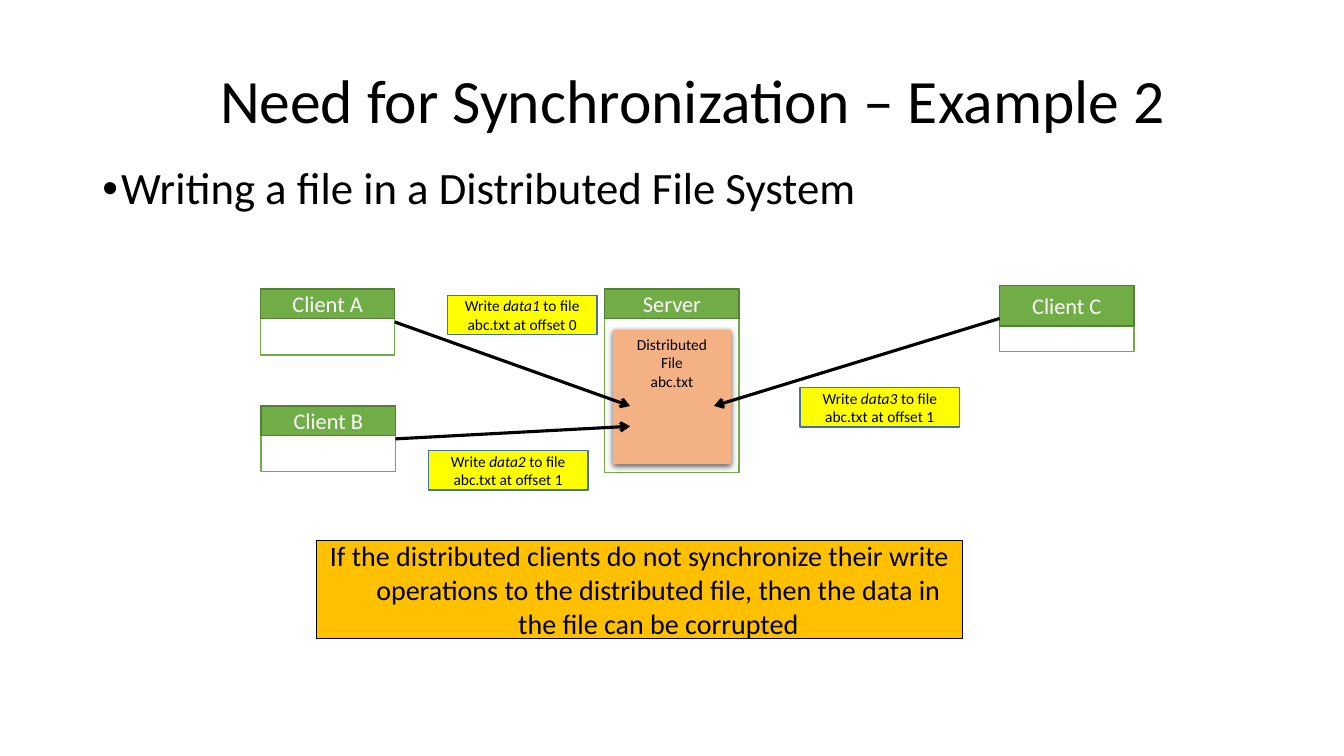
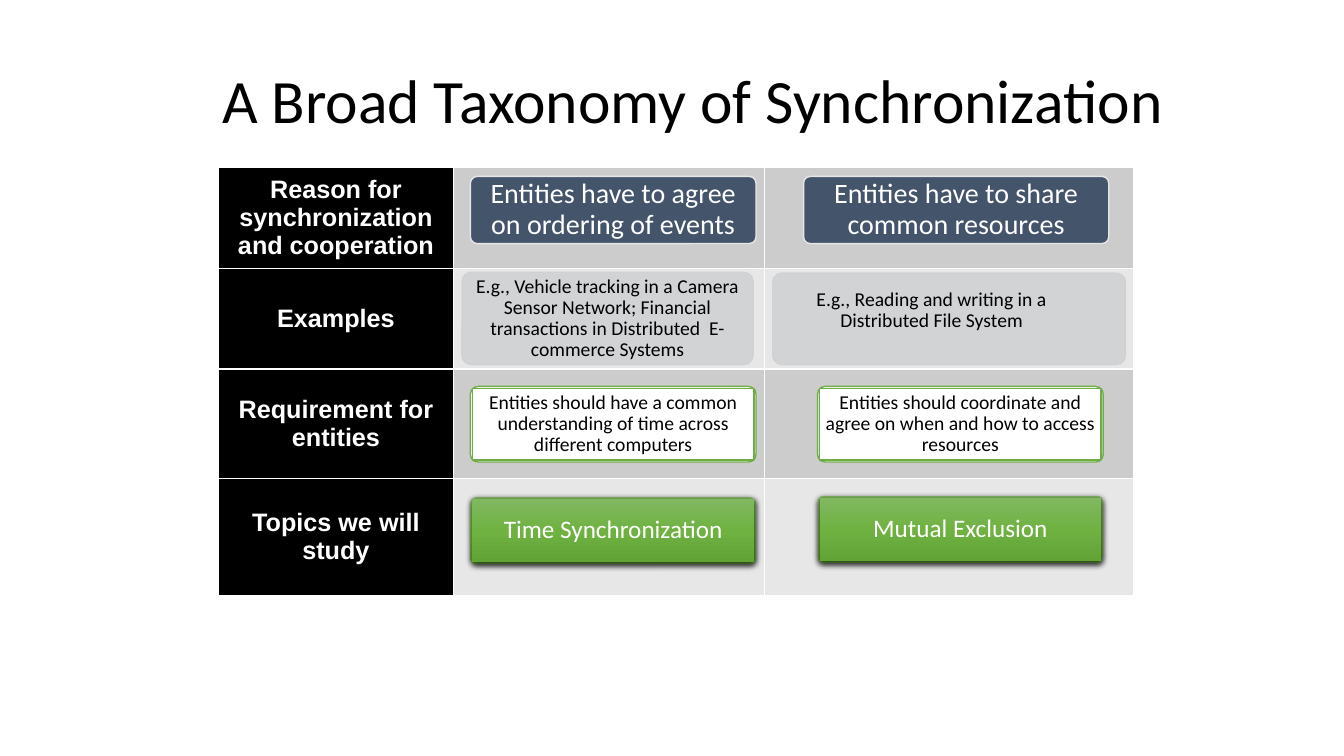
from copy import deepcopy
from dataclasses import dataclass

from pptx import Presentation
from pptx.dml.color import RGBColor
from pptx.enum.shapes import MSO_CONNECTOR, MSO_SHAPE
from pptx.enum.text import MSO_ANCHOR, PP_ALIGN
from pptx.oxml import parse_xml
from pptx.oxml.ns import nsdecls, qn
from pptx.oxml.xmlchemy import OxmlElement
from pptx.util import Pt


@dataclass(frozen=True)
class Theme:
    font: str = "Calibri"
    table_font: str = "Arial"
    # Colours
    black: str = "000000"
    white: str = "FFFFFF"
    green: str = "70AD47"
    dark_green: str = "538035"
    peach: str = "F4B183"
    yellow: str = "FFFF00"
    blue: str = "43739E"
    amber: str = "FFC000"
    navy: str = "44546A"
    pale: str = "E7E6E6"
    mist: str = "CFD1D4"
    bands: tuple = ("CCCCCC", "E7E7E7")
    gradient: tuple = ("81B861", "6FB242", "62A336")
    # Type sizes
    title: int = 44
    body: int = 32
    message: int = 20
    topic: int = 18
    node: int = 16
    detail: int = 14
    note: int = 11


THEME = Theme()
TITLE_AREA = (108, 21.5, 774, 104.5)
MARGINS = (7.2, 3.6, 7.2, 3.6)
TIGHT = (1.5, 1.5, 1.5, 1.5)


def rgb(colour):
    return RGBColor.from_string(colour)


def points(lengths):
    return [Pt(length) for length in lengths]


def write(frame, paragraphs, size, colour=THEME.black, align=PP_ALIGN.CENTER,
          anchor=MSO_ANCHOR.MIDDLE, margins=MARGINS, spacing=1.0):
    """Each paragraph is a list of runs; a run is (text, italic)."""
    frame.word_wrap = True
    frame.vertical_anchor = anchor
    (frame.margin_left, frame.margin_top,
     frame.margin_right, frame.margin_bottom) = points(margins)
    for index, runs in enumerate(paragraphs):
        paragraph = frame.add_paragraph() if index else frame.paragraphs[0]
        paragraph.alignment = align
        paragraph.line_spacing = spacing
        for text, italic in runs:
            run = paragraph.add_run()
            run.text = text
            style(run.font, size, colour, THEME.font)
            run.font.italic = italic


def style(font, size, colour, name):
    font.name = name
    font.size = Pt(size)
    font.color.rgb = rgb(colour)


def plain(*lines):
    return [[(line, False)] for line in lines]


def indent(paragraph, hang, bullet=None):
    properties = paragraph._p.get_or_add_pPr()
    properties.set("marL", str(Pt(hang)))
    properties.set("indent", str(-Pt(hang)))
    if bullet:
        properties.append(parse_xml(
            f'<a:buFont {nsdecls("a")} typeface="Arial"/>'))
        properties.append(parse_xml(
            f'<a:buChar {nsdecls("a")} char="{bullet}"/>'))


def box(slide, area, fill=None, line=None, rounded=False):
    kind = MSO_SHAPE.ROUNDED_RECTANGLE if rounded else MSO_SHAPE.RECTANGLE
    shape = slide.shapes.add_shape(kind, *points(area))
    shape.shadow.inherit = False
    if rounded:
        shape.adjustments[0] = 0.1
    if fill:
        shape.fill.solid()
        shape.fill.fore_color.rgb = rgb(fill)
    if line:
        shape.line.color.rgb = rgb(line)
        shape.line.width = Pt(1)
    else:
        shape.line.fill.background()
    return shape


def cast_shadow(shape):
    effects = shape._element.spPr.find(qn("a:effectLst"))
    effects.append(parse_xml(
        f'<a:outerShdw {nsdecls("a")} blurRad="{Pt(4.5)}" dist="{Pt(1.5)}" '
        f'dir="5400000" rotWithShape="0"><a:srgbClr val="{THEME.black}">'
        '<a:alpha val="63000"/></a:srgbClr></a:outerShdw>'))


def shade(shape):
    shape.fill.gradient()
    shape.fill.gradient_angle = 270
    stop_list = next(shape._element.spPr.iter(qn("a:gsLst")))
    stop_list.insert(1, deepcopy(stop_list[0]))
    for index, stop in enumerate(shape.fill.gradient_stops):
        stop.position = index / 2
        stop.color.rgb = rgb(THEME.gradient[index])


def make_translucent(shape, percent):
    for colour in shape._element.spPr.iter(qn("a:srgbClr")):
        alpha = OxmlElement("a:alpha")
        alpha.set("val", str(percent * 1000))
        colour.append(alpha)


def add_slide(deck, title):
    slide = deck.slides.add_slide(deck.slide_layouts[6])
    heading = slide.shapes.add_textbox(*points(TITLE_AREA))
    write(heading.text_frame, plain(title), THEME.title, spacing=0.9)
    return slide


# Parts of the file system diagram

def add_node(slide, name, left, top, height, header_height=21):
    frame = box(slide, (left, top, 96, height), THEME.white, THEME.green)
    header = box(slide, (left, top, 96, header_height),
                 THEME.green, THEME.dark_green)
    write(header.text_frame, plain(name), THEME.node, THEME.white)
    return frame


def add_arrow(slide, client, side, target):
    arrow = slide.shapes.add_connector(
        MSO_CONNECTOR.STRAIGHT, 0, 0, *points(target))
    arrow.begin_connect(client, side)
    arrow.line.color.rgb = rgb(THEME.black)
    arrow.line.width = Pt(2.25)
    head = OxmlElement("a:tailEnd")
    head.set("type", "arrow")
    arrow.line._get_or_add_ln().append(head)
    arrow._element.spPr.append(OxmlElement("a:effectLst"))


def add_note(slide, area, data, offset):
    note = box(slide, area, THEME.yellow, THEME.blue)
    runs = [("Write ", False), (data, True),
            (f" to file abc.txt at offset {offset}", False)]
    write(note.text_frame, [runs], THEME.note)


# Parts of the taxonomy

def add_table(slide, area, widths, heights, labels):
    table = slide.shapes.add_table(
        len(heights), len(widths), *points(area)).table
    table.first_row = table.horz_banding = False
    for column, width in zip(table.columns, widths):
        column.width = Pt(width)
    for index, (row, height) in enumerate(zip(table.rows, heights)):
        row.height = Pt(height)
        for cell in row.cells:
            add_borders(cell)
            cell.fill.solid()
            cell.fill.fore_color.rgb = rgb(THEME.bands[index % 2])
        label = row.cells[0]
        label.fill.fore_color.rgb = rgb(THEME.black)
        label.vertical_anchor = MSO_ANCHOR.MIDDLE
        paragraph = label.text_frame.paragraphs[0]
        paragraph.alignment = PP_ALIGN.CENTER
        run = paragraph.add_run()
        run.text = labels[index]
        style(run.font, THEME.topic, THEME.white, THEME.table_font)
        run.font.bold = True


def add_borders(cell):
    properties = cell._tc.get_or_add_tcPr()
    for side in ("lnL", "lnR", "lnT", "lnB"):
        properties.append(parse_xml(
            f'<a:{side} {nsdecls("a")} w="{Pt(1)}"><a:solidFill>'
            f'<a:srgbClr val="{THEME.white}"/></a:solidFill></a:{side}>'))


def add_reason(slide, area, text):
    card = box(slide, area, THEME.navy, THEME.pale, rounded=True)
    write(card.text_frame, plain(text), THEME.message, THEME.white,
          margins=TIGHT, spacing=0.9)


def add_example(slide, area, text, margins=TIGHT):
    card = box(slide, area, THEME.mist, THEME.mist, rounded=True)
    make_translucent(card, 90)
    write(card.text_frame, plain(text), THEME.detail,
          margins=margins, spacing=0.9)


def add_layers(slide, area, fill=None, line=None):
    """A rounded card with a square face just inside it."""
    left, top, width, height = area
    face = (left + 1.5, top + 1.5, width - 3, height - 3)
    return (box(slide, area, fill, line, rounded=True),
            box(slide, face, fill, line))


def add_requirement(slide, area, text):
    face = add_layers(slide, area, THEME.white, THEME.green)[1]
    write(face.text_frame, plain(text), THEME.detail,
          margins=TIGHT, spacing=0.9)


def add_topic(slide, area, text):
    layers = add_layers(slide, area)
    for layer in layers:
        shade(layer)
        cast_shadow(layer)
    write(layers[1].text_frame, plain(text), THEME.topic, THEME.white,
          margins=TIGHT, spacing=0.9)


# Slides

def build_example(deck):
    slide = add_slide(deck, "Need for Synchronization – Example 2")
    topic = slide.shapes.add_textbox(*points((66, 115, 803.5, 60)))
    indent(topic.text_frame.paragraphs[0], 13.5, "•")
    write(topic.text_frame, plain("Writing a file in a Distributed File System"),
          THEME.body, align=PP_ALIGN.LEFT, anchor=MSO_ANCHOR.TOP, spacing=0.9)

    # Server and the shared file
    add_node(slide, "Server", 432, 206.5, 131)
    shared_file = box(slide, (438, 235.5, 84, 96), THEME.peach)
    cast_shadow(shared_file)
    write(shared_file.text_frame, plain("Distributed", "File", "abc.txt"),
          THEME.note, anchor=MSO_ANCHOR.TOP)

    # Clients and their writes
    client_a = add_node(slide, "Client A", 186, 206.5, 47)
    client_b = add_node(slide, "Client B", 186.5, 290, 47)
    client_c = add_node(slide, "Client C", 714, 204, 47, header_height=29)
    add_arrow(slide, client_a, 3, (450, 290))
    add_arrow(slide, client_b, 3, (450, 304.5))
    add_arrow(slide, client_c, 1, (510, 290))
    add_note(slide, (319.5, 211, 107, 28), "data1", 0)
    add_note(slide, (306, 322, 114, 28), "data2", 1)
    add_note(slide, (571.5, 277, 114, 28), "data3", 1)

    # Conclusion
    conclusion = box(slide, (226, 386, 461.5, 70), THEME.amber, THEME.black)
    indent(conclusion.text_frame.paragraphs[0], 27)
    write(conclusion.text_frame, plain(
        "If the distributed clients do not synchronize their write operations "
        "to the distributed file, then the data in the file can be corrupted"),
        THEME.message)


def build_taxonomy(deck):
    slide = add_slide(deck, "A Broad Taxonomy of Synchronization")
    add_table(slide, (156, 119.5, 654, 306), (168, 222, 264), (72, 72, 78, 84),
              ("Reason for synchronization and cooperation", "Examples",
               "Requirement for entities", "Topics we will study"))

    # Ordering of events
    add_reason(slide, (336, 126, 204, 48),
               "Entities have to agree on ordering of events")
    add_example(slide, (330, 194.5, 208, 66),
                "E.g., Vehicle tracking in a Camera Sensor Network; Financial "
                "transactions in Distributed  E-commerce Systems")
    add_requirement(slide, (336, 276, 204, 54),
                    "Entities should have a common understanding of time "
                    "across different computers")
    add_topic(slide, (336, 355, 204, 48), "Time Synchronization")

    # Sharing of resources
    add_reason(slide, (574, 126, 218, 48),
               "Entities have to share common resources")
    add_example(slide, (552, 195, 252, 65.5),
                "E.g., Reading and writing in a Distributed File System",
                margins=(1.5, 1.5, 26.5, 13))
    add_requirement(slide, (584, 276, 204, 54),
                    "Entities should coordinate and agree on when and how "
                    "to access resources")
    add_topic(slide, (584, 354, 204, 48), "Mutual Exclusion")


def main():
    deck = Presentation()
    deck.slide_width, deck.slide_height = Pt(960), Pt(540)
    build_example(deck)
    build_taxonomy(deck)
    deck.save("out.pptx")


if __name__ == "__main__":
    main()
